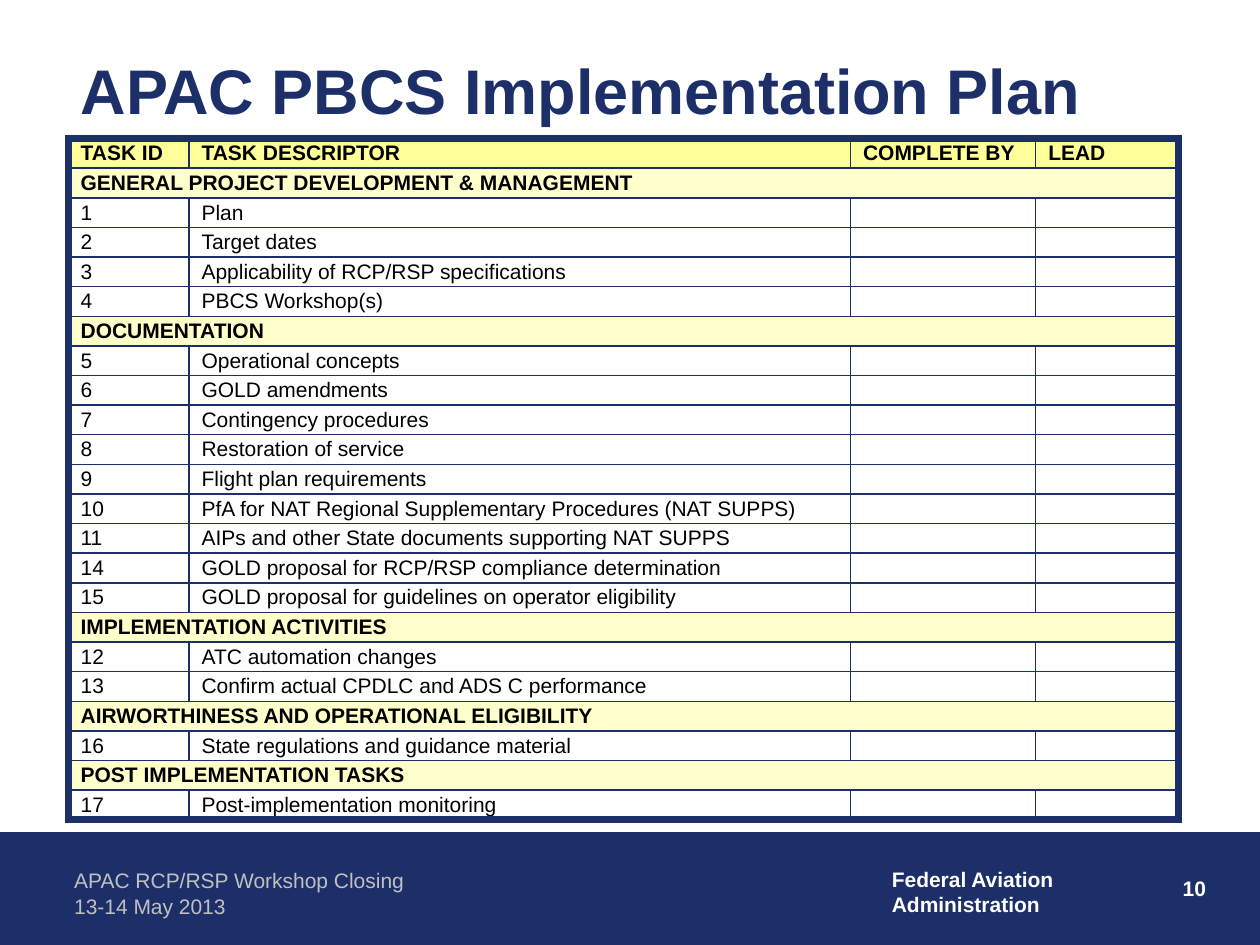
from lxml.etree import SubElement as Sub
from pptx import Presentation
from pptx.dml.color import RGBColor
from pptx.enum.shapes import MSO_SHAPE as Shape
from pptx.enum.text import MSO_ANCHOR as Anchor, PP_ALIGN as Align
from pptx.oxml.ns import qn
from pptx.util import Inches, Pt

# Page grid: 100 columns by 75 rows
COLS, ROWS = 100, 75
UNIT = Inches(10) / COLS
NAVY, GOLD, CREAM, WHITE = "1D2F68", "FFFF99", "FFFFCC", "FFFFFF"
HEAD = ["TASK ID", "TASK DESCRIPTOR", "COMPLETE BY", "LEAD"]
TASKS = {
    "GENERAL PROJECT DEVELOPMENT & MANAGEMENT": [
        (1, "Plan"),
        (2, "Target dates"),
        (3, "Applicability of RCP/RSP specifications"),
        (4, "PBCS Workshop(s)"),
    ],
    "DOCUMENTATION": [
        (5, "Operational concepts"),
        (6, "GOLD amendments"),
        (7, "Contingency procedures"),
        (8, "Restoration of service"),
        (9, "Flight plan requirements"),
        (10, "PfA for NAT Regional Supplementary Procedures (NAT SUPPS)"),
        (11, "AIPs and other State documents supporting NAT SUPPS"),
        (14, "GOLD proposal for RCP/RSP compliance determination"),
        (15, "GOLD proposal for guidelines on operator eligibility"),
    ],
    "IMPLEMENTATION ACTIVITIES": [
        (12, "ATC automation changes"),
        (13, "Confirm actual CPDLC and ADS C performance"),
    ],
    "AIRWORTHINESS AND OPERATIONAL ELIGIBILITY": [
        (16, "State regulations and guidance material"),
    ],
    "POST IMPLEMENTATION TASKS": [
        (17, "Post-implementation monitoring"),
    ],
}


def rgb(code):
    return RGBColor.from_string(code)


def span(*units):
    return [round(u * UNIT) for u in units]


def write(frame, text, color, size=12, bold=False, align=Align.LEFT):
    frame.text = text
    para = frame.paragraphs[0]
    para.alignment = align
    form = {"name": "Arial", "size": Pt(size), "bold": bold}
    for run in para.runs:
        for key, val in form.items():
            setattr(run.font, key, val)
        run.font.color.rgb = rgb(color)
    if not text:  # keeps an empty cell as low as its row
        para._p.get_or_add_endParaRPr().set("sz", str(size * 100))


def label(slide, box, text, color, wrap=True, **form):
    frame = slide.shapes.add_textbox(*span(*box)).text_frame
    frame.word_wrap = wrap
    write(frame, text, color, **form)


def title(slide, box, text):
    head = slide.shapes.title
    for key, val in zip(("left", "top", "width", "height"), span(*box)):
        setattr(head, key, val)
    head.text_frame.vertical_anchor = Anchor.MIDDLE
    write(head.text_frame, text, NAVY, size=36, bold=True)


def footer(slide, box):
    left, top, wide, high = box
    band = slide.shapes.add_shape(Shape.RECTANGLE, *span(*box))
    band.shadow.inherit = False
    band.fill.solid()
    band.fill.fore_color.rgb = band.line.color.rgb = rgb(NAVY)
    band.line.width = Pt(0.75)
    label(slide, (left + 4.9, top + 2.3, 32.6, 5),
          "APAC RCP/RSP Workshop Closing\v13-14 May 2013", "C0C0C0")
    label(slide, (left + 69.8, top + 2.2, 15, 5),
          "Federal Aviation\vAdministration", WHITE, wrap=False, bold=True)
    label(slide, (left + 75.9, top + 2.9, 20.8, 5), "10", WHITE,
          bold=True, align=Align.RIGHT)


def edge(cell, sides):
    props = cell._tc.get_or_add_tcPr()
    for side, thick in sides.items():
        line = Sub(props, qn("a:ln" + side), w=str(Pt(4.5 if thick else 1)))
        fill = Sub(line, qn("a:solidFill"))
        Sub(fill, qn("a:srgbClr"), val=NAVY)


def plan(slide, box, parts):
    # Each row: texts, fill, bold, joined
    rows = [(HEAD, GOLD, True, False)]
    for name, tasks in TASKS.items():
        rows.append(([name, "", "", ""], CREAM, True, True))
        rows += [([str(num), task, "", ""], WHITE, False, False)
                 for num, task in tasks]
    end, last = len(rows) - 1, len(parts) - 1
    grid = slide.shapes.add_table(len(rows), len(parts), *span(*box)).table
    grid.first_row = grid.horz_banding = False
    for col, wide in zip(grid.columns, span(*parts)):
        col.width = wide
    for y, (texts, fill, bold, joined) in enumerate(rows):
        grid.rows[y].height = round(box[3] * UNIT / len(rows))
        if joined:
            grid.cell(y, 0).merge(grid.cell(y, last))
        for x, text in enumerate(texts):
            cell = grid.cell(y, x)
            edge(cell, {"L": x == 0, "R": x == last or joined,
                        "T": y == 0, "B": y == end})
            cell.fill.solid()
            cell.fill.fore_color.rgb = rgb(fill)
            cell.vertical_anchor = Anchor.MIDDLE
            cell.margin_top = cell.margin_bottom = Pt(1.25)
            write(cell.text_frame, text, "000000", bold=bold)


def main():
    deck = Presentation()
    deck.slide_width, deck.slide_height = span(COLS, ROWS)
    slide = deck.slides.add_slide(deck.slide_layouts[5])
    footer(slide, (0, 66.1, COLS, 8.9))
    title(slide, (5.4, 2.4, 88, 9.3), "APAC PBCS Implementation Plan")
    plan(slide, (5.4, 11, 88.1, 52), (9.6, 52.5, 14.7, 11.3))
    deck.save("out.pptx")


if __name__ == "__main__":
    main()
